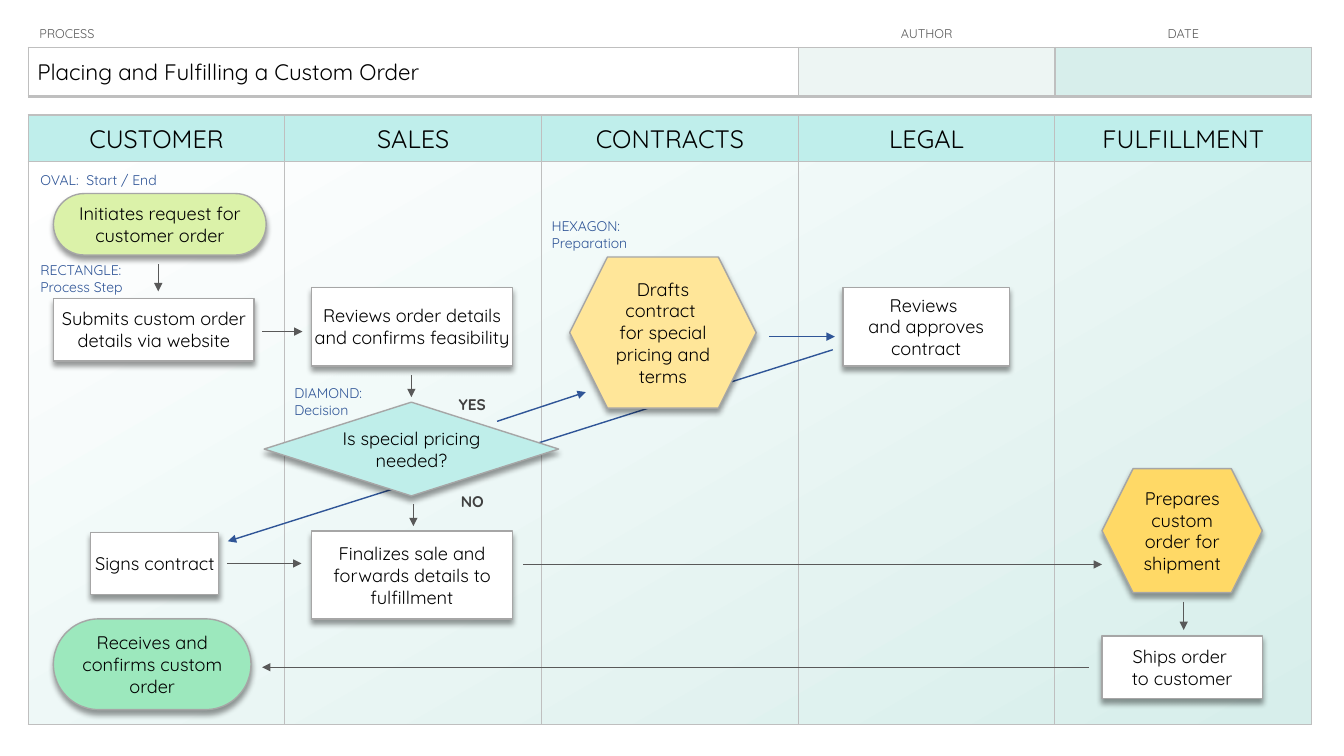
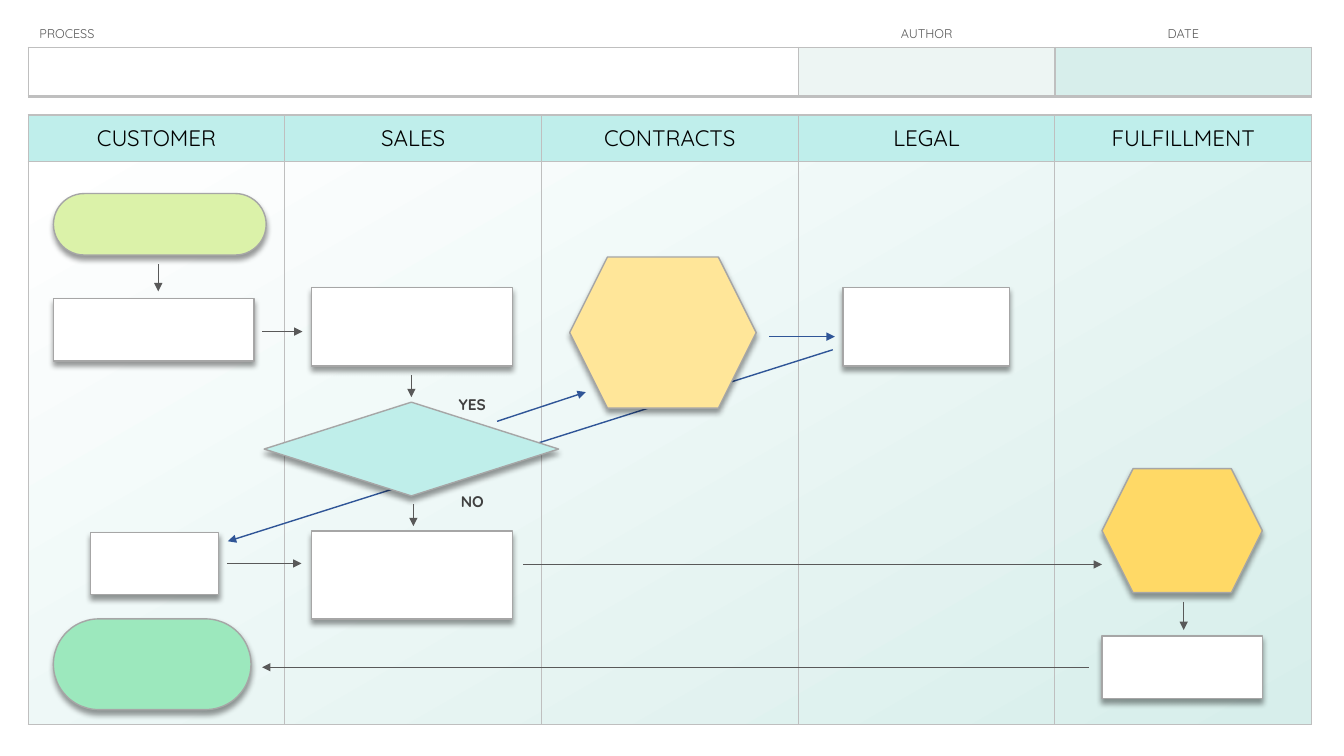
"""Build two swimlane slides: a filled-in custom order process and its empty form."""
from lxml.etree import SubElement
from pptx import Presentation
from pptx.dml.color import RGBColor
from pptx.enum.shapes import MSO_CONNECTOR as CONNECTOR, MSO_SHAPE as SHAPE
from pptx.enum.text import MSO_ANCHOR as ANCHOR, PP_ALIGN as ALIGN
from pptx.oxml.ns import qn
from pptx.util import Inches, Pt

FONT = "Quicksand"
BLACK, WHITE = "000000", "FFFFFF"
GRID, OUTLINE = "BFBFBF", "A6A6A6"
GRAY, DARK_GRAY, BLUE = "595959", "404040", "2F5597"
MINT, PALE_MINT, TEAL = "D7EEEB", "EDF5F3", "BFEEEB"
DECISION, START, END = "BFEEEA", "DBF2A9", "9CE8BD"
PREPARE, SHIP = "FFE699", "FFD966"

LEFT, WIDTH = 0.28, 12.73
LANES = ["CUSTOMER", "SALES", "CONTRACTS", "LEGAL", "FULFILLMENT"]
LANE_WIDTH = WIDTH / len(LANES)
TITLE = "Placing and Fulfilling a Custom Order"

STEPS = [
    (SHAPE.ROUNDED_RECTANGLE, START, (0.53, 1.92, 2.11, 0.61),
     ["Initiates request for customer order"]),
    (SHAPE.FLOWCHART_PROCESS, WHITE, (0.53, 2.96, 1.99, 0.62),
     ["Submits custom order details via website"]),
    (SHAPE.FLOWCHART_DECISION, DECISION, (2.62, 3.99, 2.92, 0.93),
     ["Is special pricing needed?"]),
    (SHAPE.ROUNDED_RECTANGLE, END, (0.53, 6.14, 1.96, 0.9),
     ["Receives and confirms custom order"]),
    (SHAPE.FLOWCHART_PROCESS, WHITE, (3.09, 2.85, 1.99, 0.78),
     ["Reviews order details and confirms feasibility"]),
    (SHAPE.FLOWCHART_PROCESS, WHITE, (8.36, 2.85, 1.65, 0.78),
     ["Reviews ", "and approves contract"]),
    (SHAPE.FLOWCHART_PROCESS, WHITE, (3.09, 5.27, 1.99, 0.87),
     ["Finalizes sale and forwards details to fulfillment"]),
    (SHAPE.HEXAGON, SHIP, (10.93, 4.65, 1.59, 1.23),
     ["Prepares custom order for shipment"]),
    (SHAPE.FLOWCHART_PROCESS, WHITE, (10.93, 6.31, 1.59, 0.62),
     ["Ships order ", "to customer"]),
    (SHAPE.FLOWCHART_PROCESS, WHITE, (0.9, 5.28, 1.27, 0.62),
     ["Signs contract"]),
    (SHAPE.HEXAGON, PREPARE, (5.65, 2.55, 1.85, 1.5),
     ["Drafts contract ", "for special pricing and terms"]),
]
RETURN_ARROW = (8.26, 3.47, 2.26, 5.37)
ARROWS = [
    (BLUE, (4.93, 4.18, 5.81, 3.89)),
    (BLUE, (7.63, 3.34, 8.28, 3.34)),
    (GRAY, (1.57, 2.62, 1.57, 2.89)),
    (GRAY, (4.08, 3.72, 4.08, 3.94)),
    (GRAY, (2.6, 3.29, 3, 3.29)),
    (GRAY, (4.1, 5, 4.1, 5.22)),
    (GRAY, (5.19, 5.6, 10.93, 5.6)),
    (GRAY, (11.74, 5.97, 11.74, 6.25)),
    (GRAY, (10.8, 6.62, 2.6, 6.62)),
    (GRAY, (2.25, 5.59, 2.99, 5.59)),
]
ANSWERS = [("YES", (4.32, 3.86, 0.73, 0.31)), ("NO", (4.3, 4.82, 0.77, 0.31))]
LEGENDS = [
    (["OVAL:  Start / End"], (0.38, 1.67, 1.61, 0.23)),
    (["RECTANGLE:", "Process Step"], (0.38, 2.52, 1.28, 0.49)),
    (["DIAMOND:", "Decision"], (2.9, 3.83, 1.07, 0.31)),
    (["HEXAGON:", "Preparation"], (5.45, 2.13, 2.05, 0.39)),
]


def color(value):
    """Turn a hex string into a colour."""
    return RGBColor.from_string(value)


def inches(values):
    """Turn several numbers into lengths."""
    return [Inches(value) for value in values]


def write(text_frame, lines, size, ink, align=ALIGN.CENTER, bold=False):
    """Write one paragraph for each line."""
    for index, line in enumerate(lines):
        paragraph = text_frame.add_paragraph() if index else text_frame.paragraphs[0]
        paragraph.alignment = align
        run = paragraph.add_run()
        run.text = line
        run.font.name, run.font.size, run.font.bold = FONT, Pt(size), bold
        run.font.color.rgb = color(ink)


def set_frame(text_frame, inset):
    """Wrap the text, centre it vertically and set equal margins."""
    text_frame.word_wrap = True
    text_frame.vertical_anchor = ANCHOR.MIDDLE
    text_frame.margin_left = text_frame.margin_right = Inches(inset)
    text_frame.margin_top = text_frame.margin_bottom = Inches(inset)


def add_label(slide, box, lines, size, ink, align=ALIGN.LEFT, bold=False):
    """Add a plain text label."""
    text_frame = slide.shapes.add_textbox(*inches(box)).text_frame
    set_frame(text_frame, 0.02)
    write(text_frame, lines, size, ink, align, bold)


def add_shadow(shape):
    """Give a shape a soft shadow straight below it."""
    shape.shadow.inherit = False
    effects = shape._element.spPr.find(qn("a:effectLst"))
    shadow = SubElement(effects, qn("a:outerShdw"), blurRad=str(Pt(4)), dist=str(Pt(3)),
                        dir="5400000", algn="t", rotWithShape="0")
    black = SubElement(shadow, qn("a:srgbClr"), val=BLACK)
    SubElement(black, qn("a:alpha"), val="40000")


def add_step(slide, kind, fill, box, lines):
    """Add one step of the process."""
    shape = slide.shapes.add_shape(kind, *inches(box))
    if kind == SHAPE.ROUNDED_RECTANGLE:
        shape.adjustments[0] = 0.5
    shape.fill.solid()
    shape.fill.fore_color.rgb = color(fill)
    shape.line.color.rgb = color(OUTLINE)
    shape.line.width = Pt(1)
    add_shadow(shape)
    set_frame(shape.text_frame, 0 if kind == SHAPE.FLOWCHART_DECISION else 0.02)
    write(shape.text_frame, lines, 13, BLACK)


def add_arrow(slide, ink, points):
    """Add a straight arrow between two points."""
    arrow = slide.shapes.add_connector(CONNECTOR.STRAIGHT, *inches(points))
    arrow.line.color.rgb = color(ink)
    arrow.line.width = Pt(1)
    SubElement(arrow.line._get_or_add_ln(), qn("a:tailEnd"), type="triangle")
    SubElement(arrow._element.spPr, qn("a:effectLst"))


def add_table(slide, top, widths, heights):
    """Add a table without header or banding style."""
    frame = slide.shapes.add_table(len(heights), len(widths),
                                   *inches((LEFT, top, WIDTH, sum(heights))))
    table = frame.table
    table.first_row = table.horz_banding = False
    for column, width in zip(table.columns, widths):
        column.width = Inches(width)
    for row, height in zip(table.rows, heights):
        row.height = Inches(height)
    return table


def format_cell(cell, borders, fill=None, inset=0.01):
    """Set the left, right, top and bottom borders, the fill and the margins."""
    properties = cell._tc.get_or_add_tcPr()
    for side, width in zip("LRTB", borders):
        line = SubElement(properties, qn(f"a:ln{side}"), w=str(Pt(width)))
        if width:
            SubElement(SubElement(line, qn("a:solidFill")), qn("a:srgbClr"), val=GRID)
        else:
            SubElement(line, qn("a:noFill"))
    if fill:
        cell.fill.solid()
        cell.fill.fore_color.rgb = color(fill)
    else:
        cell.fill.background()
    cell.vertical_anchor = ANCHOR.MIDDLE
    cell.margin_left = Inches(inset)
    cell.margin_right = cell.margin_top = Inches(0.01)
    cell.margin_bottom = 0


def add_lanes(slide, size):
    """Add the shaded background and the lanes."""
    panel = slide.shapes.add_shape(SHAPE.RECTANGLE, *inches((LEFT, 1.6, WIDTH, 5.58)))
    panel.shadow.inherit = False
    panel.line.fill.background()
    panel.fill.gradient()
    panel.fill.gradient_angle = 300
    for stop, shade in zip(panel.fill.gradient_stops, (WHITE, MINT)):
        stop.color.rgb = color(shade)
    table = add_table(slide, 1.14, [LANE_WIDTH] * len(LANES), [0.46, 5.59])
    for index, lane in enumerate(LANES):
        format_cell(table.cell(0, index), (1, 1, 1, 1), TEAL)
        format_cell(table.cell(1, index), (1, 1, 1, 1))
        write(table.cell(0, index).text_frame, [lane], size, BLACK)


def add_heading(slide, title):
    """Add the process, author and date fields."""
    table = add_table(slide, 0.19, [3 * LANE_WIDTH, LANE_WIDTH, LANE_WIDTH], [0.28, 0.49])
    fields = [("PROCESS", WHITE, ALIGN.LEFT, 0.11), ("AUTHOR", PALE_MINT, ALIGN.CENTER, 0.01),
              ("DATE", MINT, ALIGN.CENTER, 0.01)]
    for index, (name, fill, align, inset) in enumerate(fields):
        format_cell(table.cell(0, index), (0, 0, 0, 1), inset=inset)
        format_cell(table.cell(1, index), (1, 1, 1, 2.25), fill, 0.09)
        write(table.cell(0, index).text_frame, [name], 9, GRAY, align)
    write(table.cell(1, 0).text_frame, title, 16, BLACK, ALIGN.LEFT)


def add_process_slide(presentation, lane_size, filled):
    """Add a process slide, filled in or as an empty form."""
    slide = presentation.slides.add_slide(presentation.slide_layouts[6])
    add_lanes(slide, lane_size)
    add_heading(slide, [TITLE] if filled else [])
    add_arrow(slide, BLUE, RETURN_ARROW)
    for kind, fill, box, lines in STEPS:
        add_step(slide, kind, fill, box, lines if filled else [])
    for ink, points in ARROWS:
        add_arrow(slide, ink, points)
    for answer, box in ANSWERS:
        add_label(slide, box, [answer], 11, DARK_GRAY, ALIGN.CENTER, True)
    if filled:
        for lines, box in LEGENDS:
            add_label(slide, box, lines, 10, BLUE)


def main():
    """Build and save the presentation."""
    presentation = Presentation()
    presentation.slide_width, presentation.slide_height = inches((13.33, 7.5))
    add_process_slide(presentation, 18, True)
    add_process_slide(presentation, 16, False)
    presentation.save("out.pptx")


if __name__ == "__main__":
    main()
